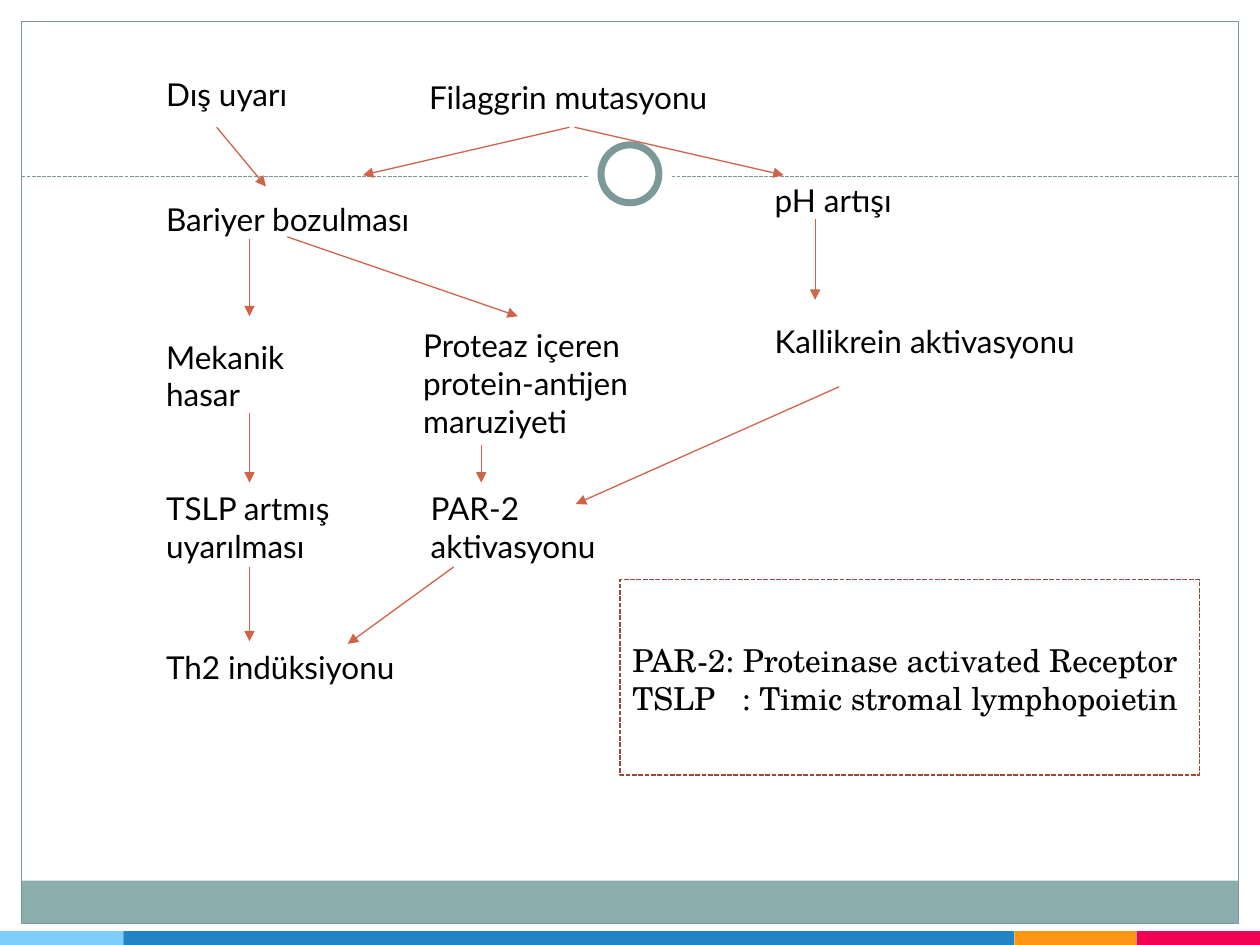
"""Build a slide with a flow diagram of barrier damage leading to Th2 induction."""
import pptx
import pptx.dml.color
import pptx.enum.dml
import pptx.enum.shapes
import pptx.enum.text
import pptx.oxml.ns
import pptx.util
from lxml import etree

Inches, Pt = pptx.util.Inches, pptx.util.Pt
SHAPE = pptx.enum.shapes.MSO_SHAPE
DASH = pptx.enum.dml.MSO_LINE.SQUARE_DOT
qn = pptx.oxml.ns.qn

COLORS = {
    "white": "FFFFFF", "black": "000000", "band": "8CADAE", "frame": "7C999A",
    "arrow": "D16349", "legend": "9B4936", "sky": "7ECEFD", "blue": "2185C5",
    "orange": "FF9715", "pink": "F20253",
}
MARGINS = [(0, 0, 10, 1.52), (0, 0, 0.17, 7.5), (9.83, 0, 0.17, 7.5)]
FOOTER = [("sky", 0.98), ("blue", 7.07), ("orange", 0.97), ("pink", 0.98)]
RINGS = [(0.67, None), (0.46, "frame")]
RING_CENTER = (5, 1.38)
LEFT_COL, STEM_X, RIGHT_COL = 1.22, 1.98, 6.05
STEPS = [
    ("Filaggrin mutasyonu", 2.98, 0.57, 3.06, 0.34),
    ("Bariyer bozulması", LEFT_COL, 1.54, 2.6, 0.34),
    ("pH artışı", RIGHT_COL, 1.39, 2.57, 0.34),
    ("Kallikrein aktivasyonu", RIGHT_COL, 2.51, 2.63, 0.34),
    ("Proteaz içeren protein-antijen maruziyeti", 3.26, 2.54, 2.29, 0.57),
    ("Mekanik hasar", LEFT_COL, 2.63, 1.77, 0.34),
    ("PAR-2 aktivasyonu", 3.32, 3.83, 1.92, 0.34),
    ("TSLP artmış uyarılması", LEFT_COL, 3.83, 2.05, 0.57),
    ("Th2 indüksiyonu", LEFT_COL, 5.09, 2.23, 0.34),
    ("Dış uyarı", LEFT_COL, 0.55, 2.12, 0.34),
]
CENTERED = "Filaggrin mutasyonu"
ARROWS = [
    (1.72, 1.01, 2.11, 1.48), (4.52, 1.01, 2.88, 1.39),
    (4.56, 1.01, 6.22, 1.39), (6.47, 1.74, 6.47, 2.38),
    (6.66, 3.07, 4.57, 4), (2.28, 1.88, 4.11, 2.51),
    (STEM_X, 1.9, STEM_X, 2.51), (STEM_X, 3.28, STEM_X, 3.83),
    (STEM_X, 4.5, STEM_X, 5.09), (3.82, 3.53, 3.82, 3.83),
    (3.6, 4.5, 2.76, 5.11),
]
LEGEND = "PAR-2: Proteinase activated Receptor\nTSLP\t: Timic stromal lymphopoietin"
LEGEND_LEFT, LEGEND_WIDTH, LEGEND_TAB = 4.92, 4.6, 0.87


def rgb(name):
    return pptx.dml.color.RGBColor.from_string(COLORS[name])


def set_line(line, color, width, dash=None):
    line.color.rgb = rgb(color)
    line.width = Pt(width)
    if dash:
        line.dash_style = dash


def add_shape(slide, kind, box, fill=None, line=None, width=0.75, dash=None):
    sp = slide.shapes.add_shape(kind, *map(Inches, box))
    sp.shadow.inherit = False
    if fill:
        sp.fill.solid()
        sp.fill.fore_color.rgb = rgb(fill)
    else:
        sp.fill.background()
    if line:
        set_line(sp.line, line, width, dash)
    else:
        sp.line.fill.background()
    return sp


def add_line(slide, ends, color, dash=None, arrow=False):
    cxn = slide.shapes.add_connector(
        pptx.enum.shapes.MSO_CONNECTOR.STRAIGHT, *map(Inches, ends))
    set_line(cxn.line, color, 0.75, dash)
    if arrow:
        etree.SubElement(cxn.line._get_or_add_ln(), qn("a:tailEnd"), type="triangle")
    etree.SubElement(cxn._element.spPr, qn("a:effectLst"))


def add_text(slide, text, box, font="Lato", wrap=True):
    tf = slide.shapes.add_textbox(*map(Inches, box)).text_frame
    tf.word_wrap = wrap
    tf.auto_size = pptx.enum.text.MSO_AUTO_SIZE.SHAPE_TO_FIT_TEXT
    tf.text = text
    for p in tf.paragraphs:
        for r in p.runs:
            r.font.size = Pt(18)
            r.font.name = font
            r.font.color.rgb = rgb("black")
    return tf


def add_background(slide):
    for box in MARGINS:
        add_shape(slide, SHAPE.RECTANGLE, box, "white")
    add_shape(slide, SHAPE.RECTANGLE, (0.17, 6.99, 9.66, 0.34), "band")
    add_shape(slide, SHAPE.RECTANGLE, (0.17, 0.17, 9.66, 7.16), line="frame")
    add_line(slide, (0.17, 1.4, 9.83, 1.4), "frame", DASH)
    cx, cy = RING_CENTER
    for size, line in RINGS:
        box = (cx - size / 2, cy - size / 2, size, size)
        add_shape(slide, SHAPE.OVAL, box, "white", line, 4)
    x = 0
    for color, width in FOOTER:
        add_shape(slide, SHAPE.RECTANGLE, (x, 7.39, width, 0.11), color)
        x += width


def add_legend(slide):
    add_shape(slide, SHAPE.RECTANGLE, (LEGEND_LEFT, 4.6, LEGEND_WIDTH, 1.55),
              line="legend", width=0.9, dash=DASH)
    tf = add_text(slide, LEGEND, (LEGEND_LEFT, 5.04, LEGEND_WIDTH, 0.71),
                  "TeX Gyre Schola", False)
    pPr = tf.paragraphs[1]._p.get_or_add_pPr()
    tabs = etree.SubElement(pPr, qn("a:tabLst"))
    etree.SubElement(tabs, qn("a:tab"), pos=str(Inches(LEGEND_TAB)), algn="l")


def main():
    prs = pptx.Presentation()
    prs.slide_width, prs.slide_height = Inches(10), Inches(7.5)
    slide = prs.slides.add_slide(prs.slide_layouts[6])
    add_background(slide)
    for text, *box in STEPS:
        tf = add_text(slide, text, box)
        if text == CENTERED:
            tf.paragraphs[0].alignment = pptx.enum.text.PP_ALIGN.CENTER
    for ends in ARROWS:
        add_line(slide, ends, "arrow", arrow=True)
    add_legend(slide)
    prs.save("out.pptx")


if __name__ == "__main__":
    main()
